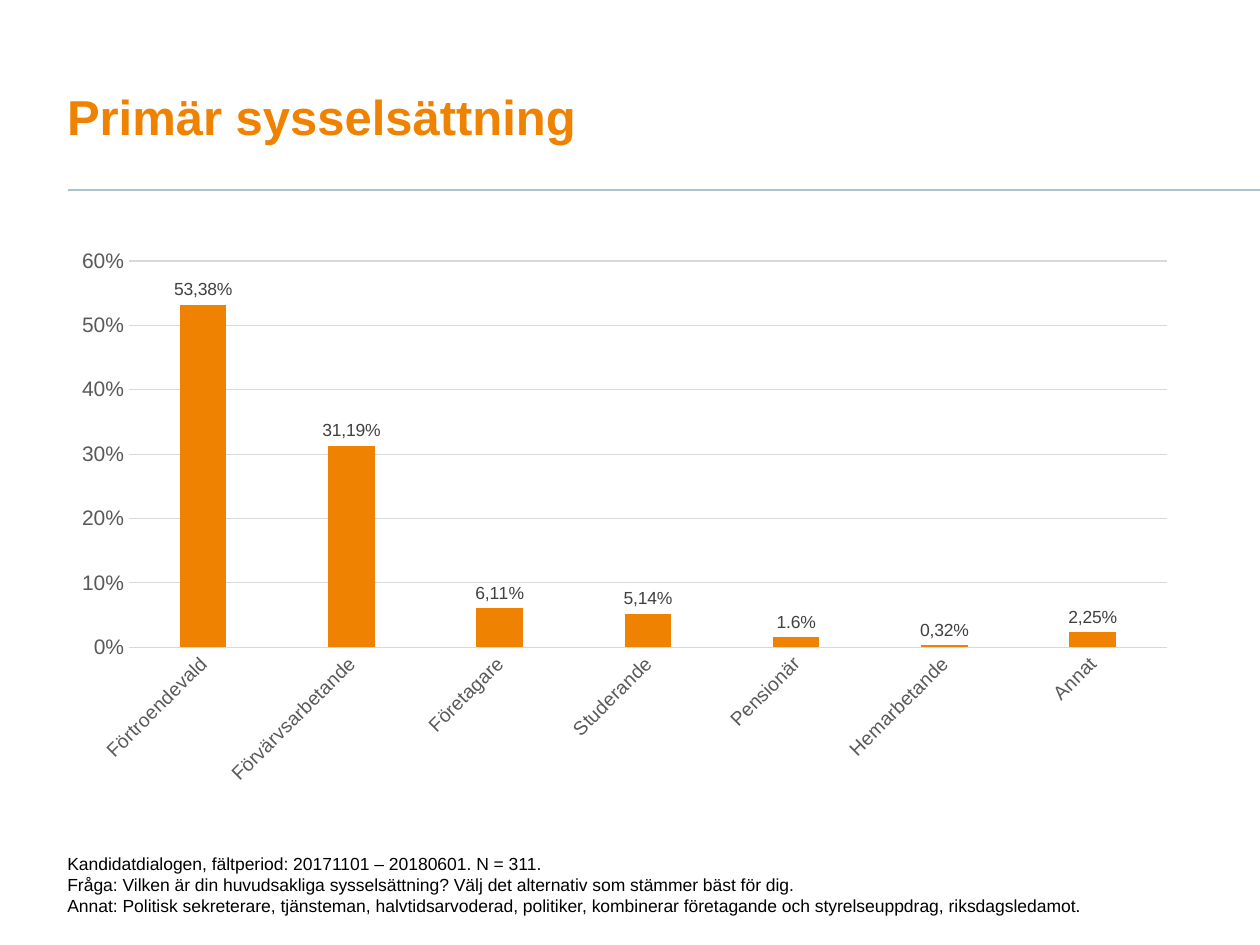
from lxml.etree import SubElement
from pptx import Presentation
from pptx.chart.data import CategoryChartData
from pptx.dml.color import RGBColor
from pptx.enum.chart import XL_CHART_TYPE, XL_LABEL_POSITION, XL_TICK_MARK
from pptx.enum.shapes import MSO_CONNECTOR
from pptx.enum.text import MSO_ANCHOR, MSO_AUTO_SIZE
from pptx.oxml.ns import qn
from pptx.util import Pt

SCALE = 914400 / 126  # EMU per px
HUES = {"orange": "EF8200", "rule": "AEC1CF", "grid": "D9D9D9",
        "axis": "595959", "label": "404040", "black": "000000"}

# Category, share and label (None shows the value itself)
ROWS = [
    ("Förtroendevald", 0.532, "53,38%"),
    ("Förvärvsarbetande", 0.313, "31,19%"),
    ("Företagare", 0.061, "6,11%"),
    ("Studerande", 0.052, "5,14%"),
    ("Pensionär", 0.016, None),
    ("Hemarbetande", 0.003, "0,32%"),
    ("Annat", 0.023, "2,25%"),
]
NOTES = [
    "Kandidatdialogen, fältperiod: 20171101 – 20180601. N = 311.",
    "Fråga: Vilken är din huvudsakliga sysselsättning? "
    "Välj det alternativ som stämmer bäst för dig.",
    "Annat: Politisk sekreterare, tjänsteman, halvtidsarvoderad, politiker, "
    "kombinerar företagande och styrelseuppdrag, riksdagsledamot.",
]


def px(*sizes):
    return [round(size * SCALE) for size in sizes]


class Page:
    def __init__(self, slide, face="Arial"):
        self.slide = slide
        self.face = face

    def style(self, font, size, hue, bold=False):
        font.name, font.size, font.bold = self.face, Pt(size), bold
        font.color.rgb = RGBColor.from_string(HUES[hue])

    def stroke(self, line, hue, width):
        line.color.rgb = RGBColor.from_string(HUES[hue])
        line.width = Pt(width)

    def rule(self, *ends):
        line = self.slide.shapes.add_connector(MSO_CONNECTOR.STRAIGHT, *px(*ends))
        self.stroke(line.line, "rule", 1)
        SubElement(line._element.spPr, qn("a:effectLst"))

    def text(self, box, lines, size, hue, bold=False):
        frame = self.slide.shapes.add_textbox(*px(*box)).text_frame
        frame.word_wrap = True
        frame.text = "\n".join(lines)
        for par in frame.paragraphs:
            for run in par.runs:
                self.style(run.font, size, hue, bold)
        return frame

    def bars(self, box, rows):
        data = CategoryChartData(number_format="0.0%")
        data.categories = [name for name, _, _ in rows]
        data.add_series("Series 1", [share for _, share, _ in rows])
        chart = self.slide.shapes.add_chart(
            XL_CHART_TYPE.COLUMN_CLUSTERED, *px(*box), data).chart
        chart.has_title = chart.has_legend = False
        self.style(chart.font, 10, "black")

        plot = chart.plots[0]
        plot.gap_width, plot.overlap = 219, -27
        plot.vary_by_categories = False
        series = plot.series[0]
        series.format.fill.solid()
        series.format.fill.fore_color.rgb = RGBColor.from_string(HUES["orange"])

        self.axes(chart)
        self.labels(series, rows)
        self.place(chart, x=0.055, y=0.052, w=0.92, h=0.691)

    def axes(self, chart):
        cat, val = chart.category_axis, chart.value_axis
        for axis, size in ((cat, 11), (val, 12)):
            axis.major_tick_mark = axis.minor_tick_mark = XL_TICK_MARK.NONE
            self.style(axis.tick_labels.font, size, "axis")
        self.stroke(cat.format.line, "grid", 0.75)
        cat._element.txPr.bodyPr.set("rot", "-2700000")  # 45 degrees upwards
        val.minimum_scale, val.maximum_scale, val.major_unit = 0, 0.6, 0.1
        val.tick_labels.number_format = "0%"
        val.tick_labels.number_format_is_linked = False
        val.format.line.fill.background()
        self.stroke(val.major_gridlines.format.line, "grid", 0.75)

    def labels(self, series, rows):
        marks = series.data_labels
        marks.show_value = True
        marks.number_format, marks.number_format_is_linked = "0.0%", False
        marks.position = XL_LABEL_POSITION.OUTSIDE_END
        self.style(marks.font, 10, "label")
        for spot, (_, _, label) in enumerate(rows):
            if label:
                mark = series.points[spot].data_label
                mark.text_frame.text = label
                self.style(mark.text_frame.paragraphs[0].runs[0].font, 10, "label")
                mark.position = XL_LABEL_POSITION.OUTSIDE_END

    def place(self, chart, **parts):
        area = chart._chartSpace.chart.plotArea
        for old in area.findall(qn("c:layout")):
            area.remove(old)
        layout = SubElement(area, qn("c:layout"))
        area.insert(0, layout)
        inner = SubElement(layout, qn("c:manualLayout"))
        SubElement(inner, qn("c:layoutTarget")).set("val", "inner")
        for mode in ("xMode", "yMode"):
            SubElement(inner, qn("c:" + mode)).set("val", "edge")
        for key, part in parts.items():
            SubElement(inner, qn("c:" + key)).set("val", str(part))


def main():
    deck = Presentation()
    deck.slide_width, deck.slide_height = px(1260, 945)
    page = Page(deck.slides.add_slide(deck.slide_layouts[6]))

    # Heading and rule
    page.rule(68, 190, 1260, 190)
    head = page.text((67, 39, 902, 113), ["Primär sysselsättning"], 28, "orange", True)
    head.vertical_anchor = MSO_ANCHOR.BOTTOM
    head.margin_left = head.margin_top = 0
    head.paragraphs[0].line_spacing = 0.9

    # Chart of main occupations
    page.bars((67, 232, 1128, 559), ROWS)

    # Source notes
    foot = page.text((55, 847, 1082, 77), NOTES, 10, "black")
    foot.auto_size = MSO_AUTO_SIZE.SHAPE_TO_FIT_TEXT

    deck.save("out.pptx")


if __name__ == "__main__":
    main()
